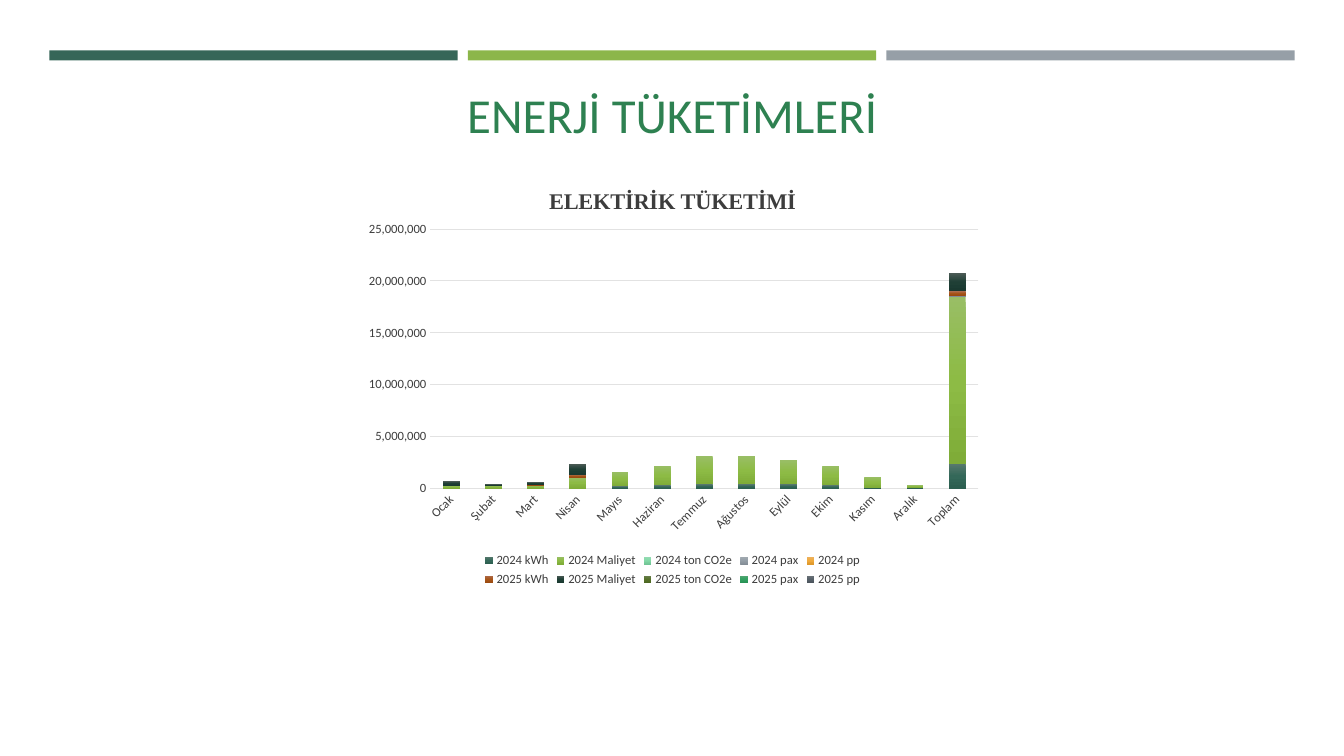
"""Build the energy consumption slide with its stacked monthly electricity chart."""
from dataclasses import dataclass
from typing import Optional

from lxml import etree
from pptx import Presentation
from pptx.chart.chart import Chart
from pptx.chart.data import CategoryChartData
from pptx.dml.color import RGBColor
from pptx.enum.chart import XL_CHART_TYPE, XL_LEGEND_POSITION, XL_TICK_MARK
from pptx.enum.shapes import MSO_SHAPE
from pptx.enum.text import MSO_ANCHOR, MSO_AUTO_SIZE, PP_ALIGN
from pptx.oxml import parse_xml
from pptx.oxml.ns import nsdecls
from pptx.slide import Slide
from pptx.util import Inches, Pt

TEAL = RGBColor(0x36, 0x66, 0x58)
LIME = RGBColor(0x8C, 0xB6, 0x4A)
GREY = RGBColor(0x96, 0x9F, 0xA7)
TITLE_GREEN = RGBColor(0x2E, 0x81, 0x51)
TEXT_GREY = RGBColor(0x3D, 0x3D, 0x3D)
GRID_GREY = RGBColor(0xE2, 0xE2, 0xE2)

UNIT = 100_000
MONTHS = ["Ocak", "Şubat", "Mart", "Nisan", "Mayıs", "Haziran", "Temmuz",
          "Ağustos", "Eylül", "Ekim", "Kasım", "Aralık", "Toplam"]
ZEROS = [0] * len(MONTHS)
UNMEASURED = [None] * 8


@dataclass
class Measure:
    """A series: its values in units of 100,000 and its gradient from top to bottom."""
    name: str
    values: list[Optional[int]]
    gradient: tuple[RGBColor, RGBColor, RGBColor]


def shades(*codes: str) -> tuple[RGBColor, ...]:
    """Turn hex codes into colours."""
    return tuple(RGBColor.from_string(code) for code in codes)


MEASURES = [
    Measure("2024 kWh", [0, 0, 0, 0, 2, 3, 4, 4, 4, 3, 1, 1, 24],
            shades("58796E", "346859", "2C5F50")),
    Measure("2024 Maliyet", [3, 3, 3, 11, 14, 19, 27, 27, 23, 19, 10, 2, 161],
            shades("99BE65", "8DBB45", "7FAC38")),
    Measure("2024 ton CO2e", ZEROS, shades("96DBB3", "84D9A8", "71C595")),
    Measure("2024 pax", ZEROS[:-1] + [1], shades("A2AAB1", "959FA8", "848D96")),
    Measure("2024 pp", [None, None, None, 0, 0, 0, 0, None, 0, 0, 0, None, 0],
            shades("ECB262", "F0AA3C", "DF992C")),
    Measure("2025 kWh", [0, 0, 1, 2, *UNMEASURED, 4],
            shades("AD6D4F", "A75519", "9B4B10")),
    Measure("2025 Maliyet", [4, 1, 2, 11, *UNMEASURED, 18],
            shades("4F5D58", "1F3F35", "1A3930")),
    Measure("2025 ton CO2e", ZEROS, shades("6B8053", "557129", "4C6721")),
    Measure("2025 pax", [0, 0, 0, 0, *UNMEASURED, 0],
            shades("58A775", "32A061", "289255")),
    Measure("2025 pp", ZEROS, shades("6D747A", "566068", "4C555D")),
]


def add_header_bars(s: Slide) -> None:
    """Draw the three equally spaced bars along the top."""
    for i, color in enumerate((TEAL, LIME, GREY)):
        bar = s.shapes.add_shape(MSO_SHAPE.RECTANGLE, Inches(0.49 + 4.15 * i),
                                 Inches(0.5), Inches(4.05), Inches(0.1))
        bar.shadow.inherit = False
        bar.fill.solid()
        bar.fill.fore_color.rgb = color
        bar.line.fill.background()


def set_title(s: Slide, text: str) -> None:
    """Place and format the slide title."""
    title = s.shapes.title
    title.left, title.top = Inches(0.92), Inches(0.79)
    title.width, title.height = Inches(11.5), Inches(1.06)
    tf = title.text_frame
    tf.auto_size = MSO_AUTO_SIZE.NONE
    tf.vertical_anchor = MSO_ANCHOR.TOP
    p = tf.paragraphs[0]
    p.alignment = PP_ALIGN.CENTER
    r = p.add_run()
    r.text = text
    r.font.name, r.font.size = "Calibri", Pt(34.9)
    r.font.color.rgb = TITLE_GREEN


def style_font(font) -> None:
    """Apply the small grey chart label style."""
    font.name, font.size = "Calibri", Pt(9)
    font.color.rgb = TEXT_GREY


def set_layout(parent, **fractions: float) -> None:
    """Fix the place of a chart part as fractions of the chart."""
    layout = parent.find("{*}layout")
    if layout is None:
        layout = parse_xml(f"<c:layout {nsdecls('c')}/>")
        tx = parent.find("{*}tx")
        if tx is None:
            parent.insert(0, layout)
        else:
            tx.addnext(layout)
    for child in list(layout):
        layout.remove(child)
    namespace = etree.QName(layout).namespace
    manual = etree.SubElement(layout, f"{{{namespace}}}manualLayout")
    settings = {"xMode": "edge", "yMode": "edge", **fractions}
    if "w" in fractions:
        settings = {"layoutTarget": "inner", **settings}
    for tag, value in settings.items():
        etree.SubElement(manual, f"{{{namespace}}}{tag}").set("val", str(value))


def fill_gradient(series, colors: tuple[RGBColor, ...]) -> None:
    """Fill a series with an evenly spaced vertical gradient."""
    stops = "".join(f'<a:gs pos="{50000 * i}"><a:srgbClr val="{color}"/></a:gs>'
                    for i, color in enumerate(colors))
    series.format.fill.background()
    sp_pr = series._element.spPr
    sp_pr.replace(sp_pr.find("{*}noFill"), parse_xml(
        f'<a:gradFill {nsdecls("a")} rotWithShape="1"><a:gsLst>{stops}</a:gsLst>'
        '<a:lin ang="5400000" scaled="0"/></a:gradFill>'))


def style_axes(chart: Chart) -> None:
    """Format both axes and the grid."""
    months, amounts = chart.category_axis, chart.value_axis
    for axis in (months, amounts):
        axis.major_tick_mark = axis.minor_tick_mark = XL_TICK_MARK.NONE
        style_font(axis.tick_labels.font)
    months.has_major_gridlines = False
    amounts.has_major_gridlines = True
    for line in (months.format.line, amounts.major_gridlines.format.line):
        line.color.rgb = GRID_GREY
        line.width = Pt(0.75)
    months._element.txPr.bodyPr.set("rot", "-2700000")
    amounts.format.line.fill.background()
    amounts.minimum_scale, amounts.maximum_scale = 0, 25_000_000
    amounts.major_unit = 5_000_000
    amounts.tick_labels.number_format = "#,##0"
    amounts.tick_labels.number_format_is_linked = False


def add_electricity_chart(s: Slide) -> None:
    """Add the stacked electricity chart."""
    data = CategoryChartData(number_format="#,##0")
    data.categories = MONTHS
    for m in MEASURES:
        data.add_series(m.name, [None if v is None else v * UNIT for v in m.values])
    chart = s.shapes.add_chart(XL_CHART_TYPE.COLUMN_STACKED, Inches(3.51), Inches(1.64),
                               Inches(6.32), Inches(4.22), data).chart
    chart.font.name, chart.font.size = "Calibri", Pt(10)
    chart.has_title = True
    r = chart.chart_title.text_frame.paragraphs[0].add_run()
    r.text = "ELEKTİRİK TÜKETİMİ"
    r.font.name, r.font.size, r.font.bold = "Times New Roman", Pt(16), True
    r.font.color.rgb = TEXT_GREY
    chart.chart_title.include_in_layout = False
    plot = chart.plots[0]
    plot.gap_width, plot.overlap = 150, 100
    plot.vary_by_categories = False
    for series, m in zip(plot.series, MEASURES):
        fill_gradient(series, m.gradient)
    style_axes(chart)
    chart.has_legend = True
    chart.legend.position = XL_LEGEND_POSITION.BOTTOM
    chart.legend.include_in_layout = False
    style_font(chart.legend.font)
    set_layout(chart.chart_title._element, x=0.3, y=0.04)
    set_layout(plot._element.getparent(), x=0.12, y=0.15, w=0.86, h=0.61)


def main() -> None:
    """Build and save the presentation."""
    prs = Presentation()
    prs.slide_width, prs.slide_height = Inches(13.33), Inches(7.5)
    s = prs.slides.add_slide(prs.slide_layouts[5])
    add_header_bars(s)
    set_title(s, "ENERJİ TÜKETİMLERİ")
    add_electricity_chart(s)
    prs.save("out.pptx")


if __name__ == "__main__":
    main()
